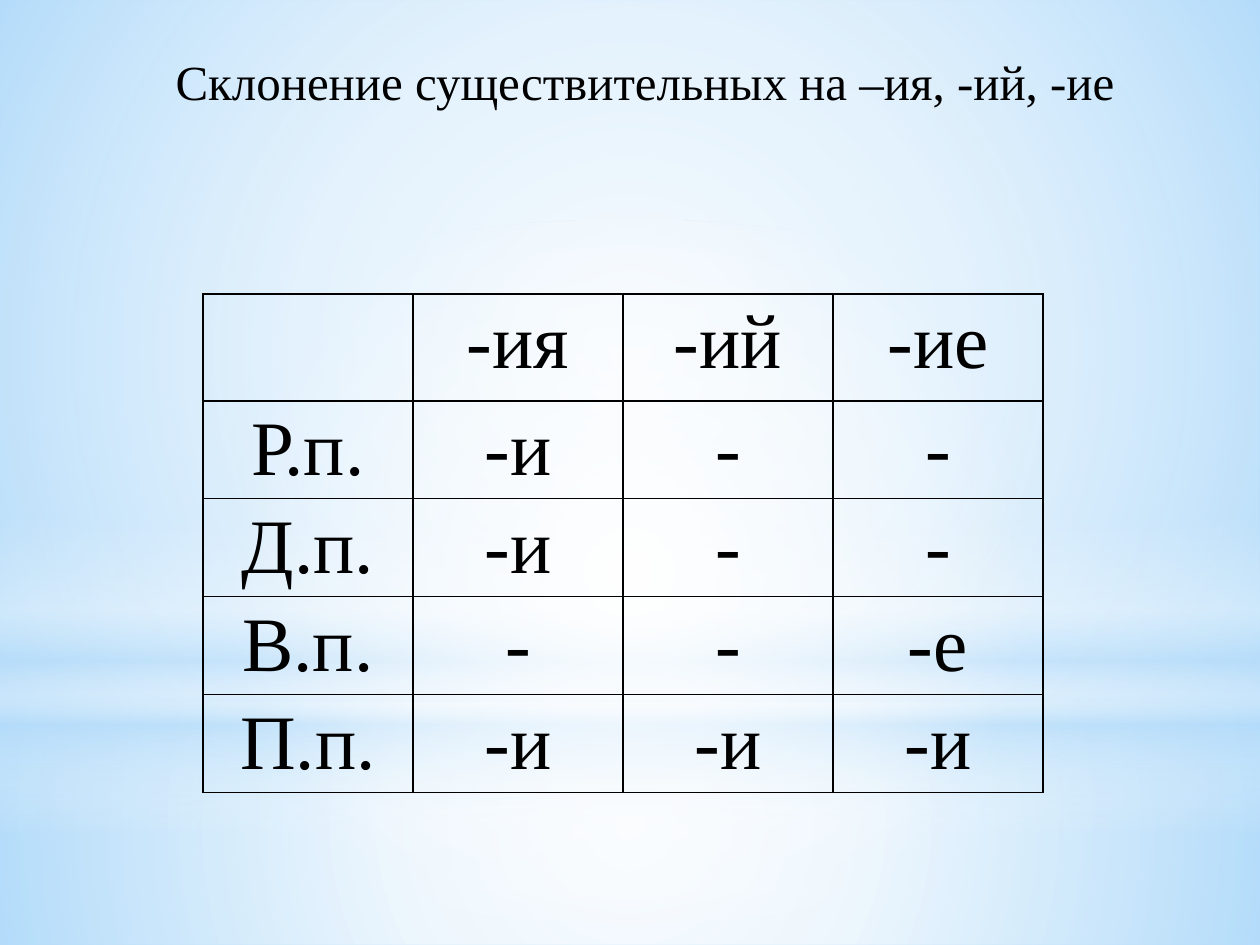
import pptx
import pptx.util
import pptx.dml.color
import pptx.enum.shapes
import pptx.enum.text
import pptx.oxml
import pptx.oxml.ns

# Content
TITLE = "Склонение существительных на –ия, -ий, -ие"
ENDINGS = [
    ["", "-ия", "-ий", "-ие"],
    ["Р.п.", "-и", "-", "-"],
    ["Д.п.", "-и", "-", "-"],
    ["В.п.", "-", "-", "-е"],
    ["П.п.", "-и", "-и", "-и"],
]

THEME = {"font": "Times New Roman", "title": 28, "cell": 44, "border": 1,
         "text": "000000", "white": "FFFFFF", "sky": "B4DCFA"}

# Backdrop layers: shape, box in px, gradient kind, stops (position %, colour, opacity %)
LAYERS = [
    ("RECTANGLE", (0, 703, 1260, 242), "circle",
     [(0, "white", 91), (37, "white", 76), (100, "sky", 79)]),
    ("RECTANGLE", (0, 0, 1260, 703), "circle",
     [(0, "white", 89), (48, "white", 62), (100, "sky", 79)]),
    ("RECTANGLE", (0, 519, 1260, 315), "linear",
     [(0, "white", 0), (29, "white", 30), (45, "sky", 40),
      (55, "white", 26), (65, "sky", 60), (100, "white", 0)]),
    ("OVAL", (0, 220, 1260, 703), "circle",
     [(0, "white", 100), (56, "white", 0)]),
]
DIRECTIONS = {
    "circle": '<a:path path="circle"><a:fillToRect l="50000" t="50000" r="50000" b="50000"/></a:path>',
    "linear": '<a:lin ang="5400000" scaled="0"/>',
}
TITLE_BOX = (84, 45, 1122, 72)
TABLE_LEFT, TABLE_TOP, COL_W, ROW_H = 203, 294, 210, 98
NS = pptx.oxml.ns.nsdecls("a")


def px(n):
    return pptx.util.Emu(n * 914400 // 126)


def color(name):
    return pptx.dml.color.RGBColor.from_string(THEME[name])


def write(tf, text, size):
    p = tf.paragraphs[0]
    p.text = text
    p.alignment = pptx.enum.text.PP_ALIGN.CENTER
    p.font.size = pptx.util.Pt(THEME[size])
    for r in p.runs:
        r.font.name = THEME["font"]
        r.font.size = pptx.util.Pt(THEME[size])
        r.font.color.rgb = color("text")


def fill_gradient(sp, kind, stops):
    gs = "".join(
        f'<a:gs pos="{pos * 1000}"><a:srgbClr val="{THEME[name]}">'
        f'<a:alpha val="{opacity * 1000}"/></a:srgbClr></a:gs>'
        for pos, name, opacity in stops)
    grad = pptx.oxml.parse_xml(
        f'<a:gradFill {NS} rotWithShape="1"><a:gsLst>{gs}</a:gsLst>{DIRECTIONS[kind]}</a:gradFill>')
    sp.fill.background()
    spPr = sp._element.spPr
    spPr.replace(spPr.find(pptx.oxml.ns.qn("a:noFill")), grad)


def add_borders(cell):
    tcPr = cell._tc.get_or_add_tcPr()
    for i, side in enumerate("LRTB"):
        tcPr.insert(i, pptx.oxml.parse_xml(
            f'<a:ln{side} {NS} w="{THEME["border"] * 12700}"><a:solidFill>'
            f'<a:srgbClr val="{THEME["text"]}"/></a:solidFill></a:ln{side}>'))


prs = pptx.Presentation()
prs.slide_width, prs.slide_height = px(1260), px(945)
s = prs.slides.add_slide(prs.slide_layouts[6])

# Backdrop
s.background.fill.solid()
s.background.fill.fore_color.rgb = color("sky")
for shape, box, kind, stops in LAYERS:
    sp = s.shapes.add_shape(pptx.enum.shapes.MSO_SHAPE[shape], *map(px, box))
    sp.shadow.inherit = False
    sp.line.fill.background()
    fill_gradient(sp, kind, stops)

# Table of case endings
rows, cols = len(ENDINGS), len(ENDINGS[0])
table = s.shapes.add_table(rows, cols, px(TABLE_LEFT), px(TABLE_TOP),
                           px(COL_W * cols), px(ROW_H * rows)).table
table.first_row = table.horz_banding = False
for col in table.columns:
    col.width = px(COL_W)
for row, texts in zip(table.rows, ENDINGS):
    row.height = px(ROW_H)
    for cell, text in zip(row.cells, texts):
        cell.fill.background()
        add_borders(cell)
        write(cell.text_frame, text, "cell")

# Title
tf = s.shapes.add_textbox(*map(px, TITLE_BOX)).text_frame
tf.word_wrap = True
tf.auto_size = pptx.enum.text.MSO_AUTO_SIZE.SHAPE_TO_FIT_TEXT
write(tf, TITLE, "title")

prs.save("out.pptx")
